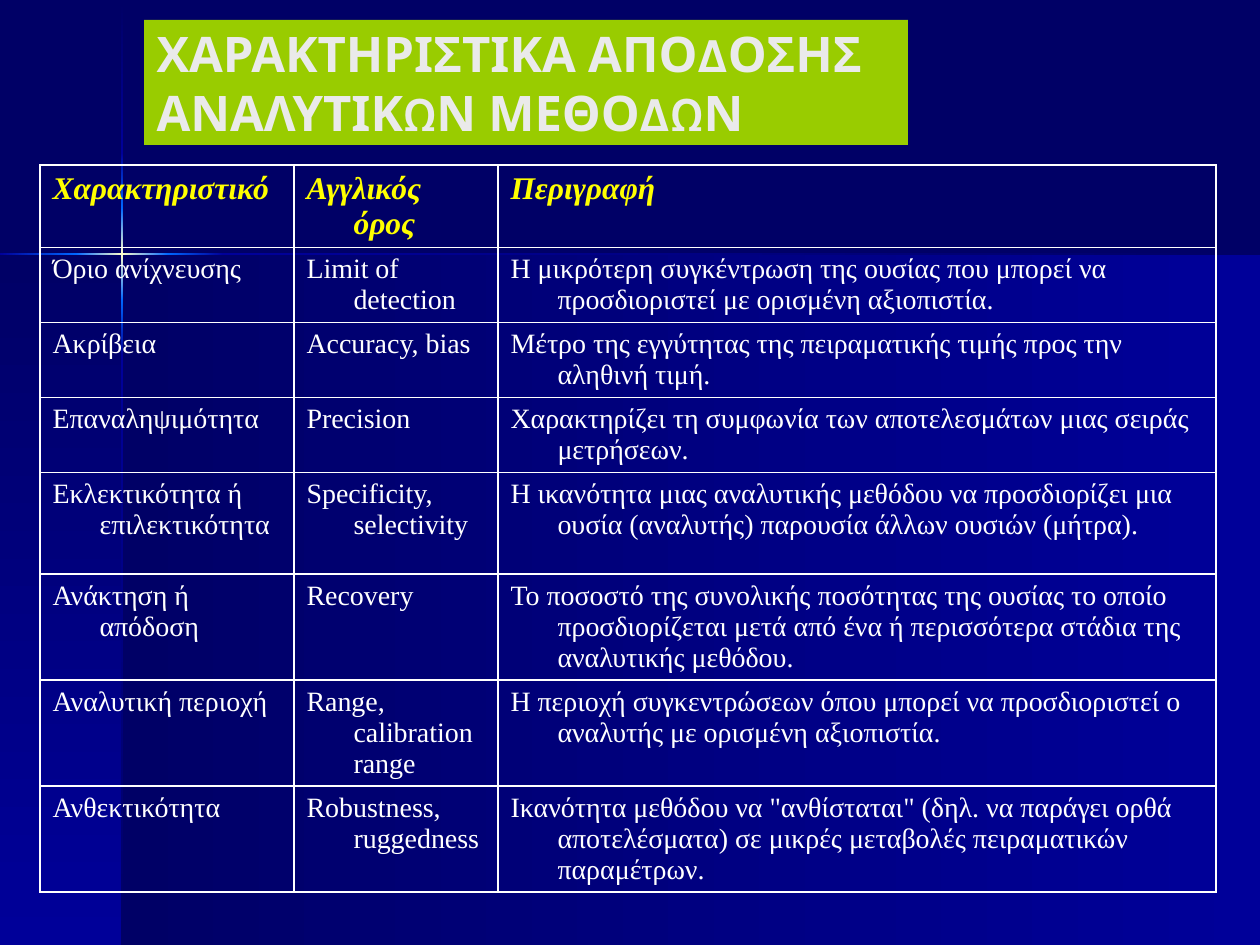
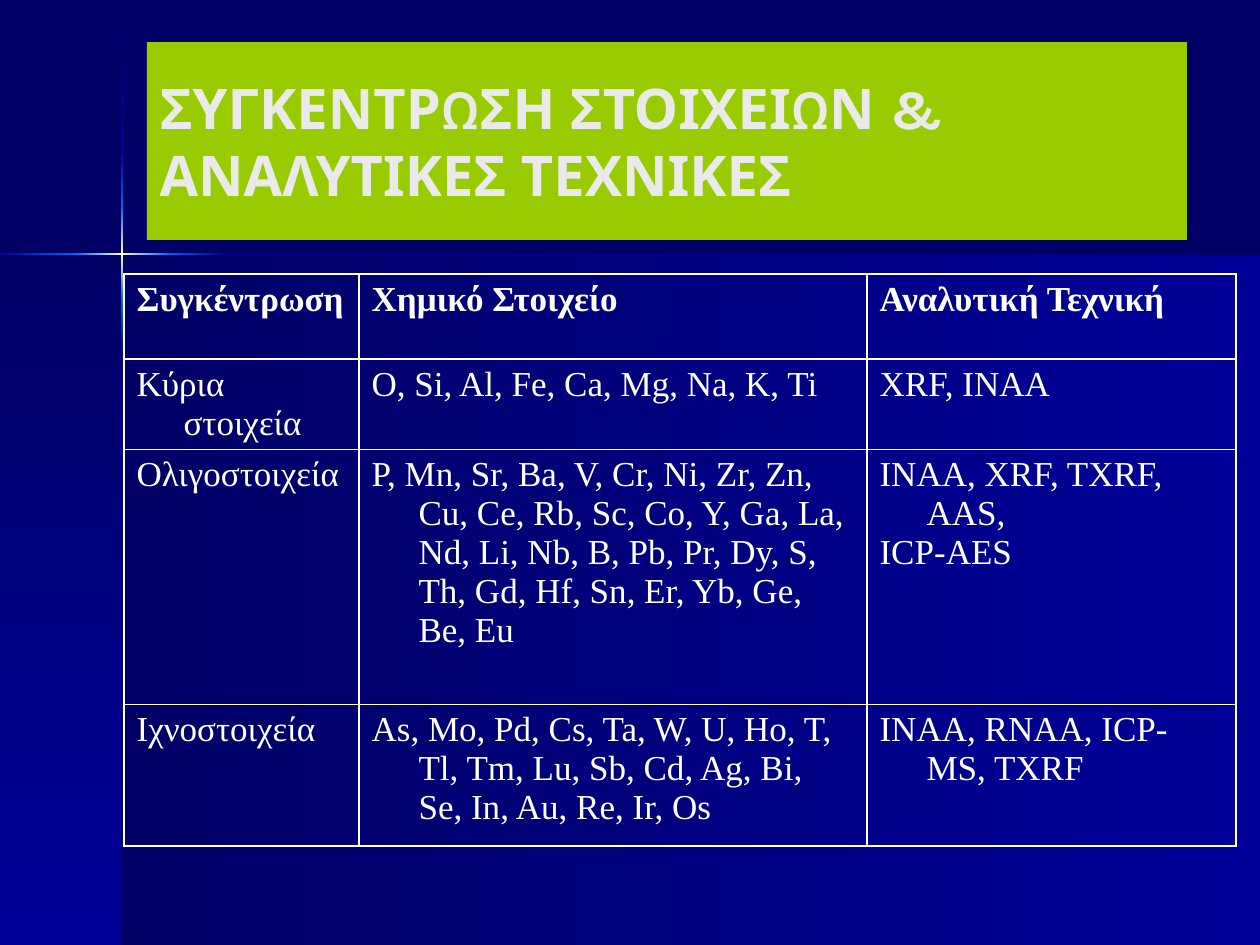
from lxml import etree
from pptx import Presentation
from pptx.dml.color import RGBColor
from pptx.enum.shapes import MSO_SHAPE
from pptx.enum.text import MSO_ANCHOR, MSO_AUTO_SIZE, PP_ALIGN
from pptx.oxml.ns import qn
from pptx.util import Pt

PX = 914400 / 126
SLIDE_W, SLIDE_H = 1260, 945
TITLE_ONLY = 5
RECTANGLE = MSO_SHAPE.RECTANGLE
MIDDLE = MSO_ANCHOR.MIDDLE
NO_AUTOFIT = MSO_AUTO_SIZE.NONE
LEFT, JUSTIFY = PP_ALIGN.LEFT, PP_ALIGN.JUSTIFY

NAVY = RGBColor(0x00, 0x00, 0x66)
BLUE = RGBColor(0x00, 0x00, 0x99)
AZURE = RGBColor(0x00, 0x66, 0xFF)
CREAM = RGBColor(0xFF, 0xFF, 0xCC)
LIME = RGBColor(0x99, 0xCC, 0x00)
PALE = RGBColor(0xEA, 0xEA, 0xEA)
YELLOW = RGBColor(0xFF, 0xFF, 0x00)
WHITE = RGBColor(0xFF, 0xFF, 0xFF)

TITLE_FONT, TABLE_FONT = "Karla", "Times New Roman"
HANGING_INDENT = 47
ACROSS, DOWN = 0, 90

# Left, top, width, height, direction and colours of each backdrop part
BACKDROP = [
    (122, 255, 1138, 690, ACROSS, (NAVY, BLUE)),
    (0, 255, 122, 690, DOWN, (NAVY, BLUE)),
    (121, 1, 2, 152, DOWN, (NAVY, BLUE)),
    (121, 355, 2, 590, DOWN, (BLUE, NAVY)),
    (223, 253, 1037, 2, ACROSS, (BLUE, NAVY)),
    (121, 300, 2, 55, DOWN, (AZURE, BLUE)),
    (121, 153, 2, 55, DOWN, (BLUE, AZURE)),
    (121, 208, 2, 92, DOWN, (AZURE, CREAM, AZURE)),
    (0, 253, 76, 2, ACROSS, (BLUE, AZURE)),
    (168, 253, 55, 2, ACROSS, (AZURE, BLUE)),
    (76, 253, 92, 2, ACROSS, (AZURE, CREAM, AZURE)),
]

PERFORMANCE = [
    ("Χαρακτηριστικό", "Αγγλικός όρος", "Περιγραφή"),
    ("Όριο ανίχνευσης", "Limit of detection",
     "Η μικρότερη συγκέντρωση της ουσίας που μπορεί να προσδιοριστεί με ορισμένη αξιοπιστία."),
    ("Ακρίβεια", "Accuracy, bias",
     "Μέτρο της εγγύτητας της πειραματικής τιμής προς την αληθινή τιμή."),
    ("Επαναληψιμότητα", "Precision",
     "Χαρακτηρίζει τη συμφωνία των αποτελεσμάτων μιας σειράς μετρήσεων."),
    ("Εκλεκτικότητα ή επιλεκτικότητα", "Specificity, selectivity",
     "Η ικανότητα μιας αναλυτικής μεθόδου να προσδιορίζει μια ουσία (αναλυτής) "
     "παρουσία άλλων ουσιών (μήτρα)."),
    ("Ανάκτηση ή απόδοση", "Recovery",
     "Το ποσοστό της συνολικής ποσότητας της ουσίας το οποίο προσδιορίζεται μετά "
     "από ένα ή περισσότερα στάδια της αναλυτικής μεθόδου."),
    ("Αναλυτική περιοχή", "Range, calibration range",
     "Η περιοχή συγκεντρώσεων όπου μπορεί να προσδιοριστεί ο αναλυτής με ορισμένη αξιοπιστία."),
    ("Ανθεκτικότητα", "Robustness, ruggedness",
     "Ικανότητα μεθόδου να \"ανθίσταται\" (δηλ. να παράγει ορθά αποτελέσματα) "
     "σε μικρές μεταβολές πειραματικών παραμέτρων."),
]

TECHNIQUES = [
    ("Συγκέντρωση", "Χημικό Στοιχείο", "Αναλυτική Τεχνική"),
    ("Κύρια στοιχεία", "O, Si, Al, Fe, Ca, Mg, Na, K, Ti", "XRF, INAA"),
    ("Ολιγοστοιχεία",
     "P, Mn, Sr, Ba, V, Cr, Νi, Zr, Zn, Cu, Ce, Rb, Sc, Co, Y, Ga, La, Nd, Li, Nb, "
     "B, Pb, Pr, Dy, S, Th, Gd, Hf, Sn, Er, Yb, Ge, Be, Eu",
     "INAA, XRF, TXRF, AAS,\nICP-AES"),
    ("Ιχνοστοιχεία",
     "As, Mo, Pd, Cs, Ta, W, U, Ho, T, Tl, Tm, Lu, Sb, Cd, Ag, Bi, Se, In, Au, Re, Ir, Os",
     "INAA, RNAA, ICP-MS, TXRF"),
]


def emu(px):
    return round(px * PX)


def write(frame, text, *, font, size, color, bold=False, italic=False, align=LEFT, hanging=0):
    frame.text = text
    for paragraph in frame.paragraphs:
        paragraph.alignment = align
        if hanging:
            properties = paragraph._p.get_or_add_pPr()
            properties.set("marL", str(emu(hanging)))
            properties.set("indent", str(-emu(hanging)))
        for run in paragraph.runs:
            run.font.name = font
            run.font.size = Pt(size)
            run.font.color.rgb = color
            run.font.bold = bold
            run.font.italic = italic


def fill_gradient(shape, direction, colors):
    """Spread any number of colours evenly along the direction."""
    shape.fill.gradient()
    shape.fill.gradient_angle = -direction % 360
    stops = shape._element.spPr.find(qn("a:gradFill")).find(qn("a:gsLst"))
    for stop in list(stops):
        stops.remove(stop)
    for i, color in enumerate(colors):
        position = str(100000 * i // (len(colors) - 1))
        stop = etree.SubElement(stops, qn("a:gs"), pos=position)
        etree.SubElement(stop, qn("a:srgbClr"), val=str(color))


def add_backdrop(slide):
    """Draw the backdrop as one group and move it to the slide's layout."""
    layout = slide.slide_layout
    layout.background.fill.solid()
    layout.background.fill.fore_color.rgb = NAVY
    backdrop = slide.shapes.add_group_shape()
    for *box, direction, colors in BACKDROP:
        part = backdrop.shapes.add_shape(RECTANGLE, *map(emu, box))
        part.shadow.inherit = False
        part.line.fill.background()
        fill_gradient(part, direction, colors)
    layout.shapes._spTree.insert(2, backdrop._element)


def place_title(slide, text, box, size):
    title = slide.shapes.title
    title.left, title.top, title.width, title.height = map(emu, box)
    title.fill.solid()
    title.fill.fore_color.rgb = LIME
    frame = title.text_frame
    frame.word_wrap = True
    frame.auto_size = NO_AUTOFIT
    frame.vertical_anchor = MIDDLE
    write(frame, text, font=TITLE_FONT, size=size, color=PALE, bold=True)


def outline_cell(cell):
    properties = cell._tc.get_or_add_tcPr()
    for i, side in enumerate(("lnL", "lnR", "lnT", "lnB")):
        border = etree.Element(qn(f"a:{side}"), w=str(Pt(1)))
        solid = etree.SubElement(border, qn("a:solidFill"))
        etree.SubElement(solid, qn("a:srgbClr"), val=str(WHITE))
        properties.insert(i, border)


def add_grid(slide, rows, origin, widths, heights, body_size, header):
    """Add a see-through table; header holds the format of its first row."""
    box = (*origin, sum(widths), sum(heights))
    table = slide.shapes.add_table(len(rows), len(widths), *map(emu, box)).table
    table.first_row = table.horz_banding = False
    for column, width in zip(table.columns, widths):
        column.width = emu(width)
    for r, (row, height) in enumerate(zip(rows, heights)):
        table.rows[r].height = emu(height)
        style = {"size": body_size, "color": WHITE} if r else {**header, "bold": True, "align": JUSTIFY}
        for c, text in enumerate(row):
            cell = table.cell(r, c)
            cell.fill.background()
            outline_cell(cell)
            write(cell.text_frame, text, font=TABLE_FONT, hanging=HANGING_INDENT, **style)


def build_performance(slide):
    place_title(slide, "ΧΑΡΑΚΤΗΡΙΣΤΙΚΑ ΑΠΟΔΟΣΗΣ \vΑΝΑΛΥΤΙΚΩΝ ΜΕΘΟΔΩΝ", (144, 20, 764, 125), 28)
    add_grid(slide, PERFORMANCE, (40, 165), (254, 204, 718),
             (82, 75, 75, 75, 102, 106, 106, 106), 16,
             {"size": 18, "color": YELLOW, "italic": True})


def build_techniques(slide):
    place_title(slide, "ΣΥΓΚΕΝΤΡΩΣΗ ΣΤΟΙΧΕΙΩΝ & ΑΝΑΛΥΤΙΚΕΣ ΤΕΧΝΙΚΕΣ", (147, 42, 1040, 198), 32)
    add_grid(slide, TECHNIQUES, (124, 274), (235, 508, 369), (85, 90, 255, 142), 20,
             {"size": 20, "color": WHITE})


def main():
    deck = Presentation()
    deck.slide_width, deck.slide_height = emu(SLIDE_W), emu(SLIDE_H)
    layout = deck.slide_layouts[TITLE_ONLY]
    slides = [deck.slides.add_slide(layout) for _ in range(2)]
    add_backdrop(slides[0])
    build_performance(slides[0])
    build_techniques(slides[1])
    deck.save("out.pptx")


if __name__ == "__main__":
    main()
